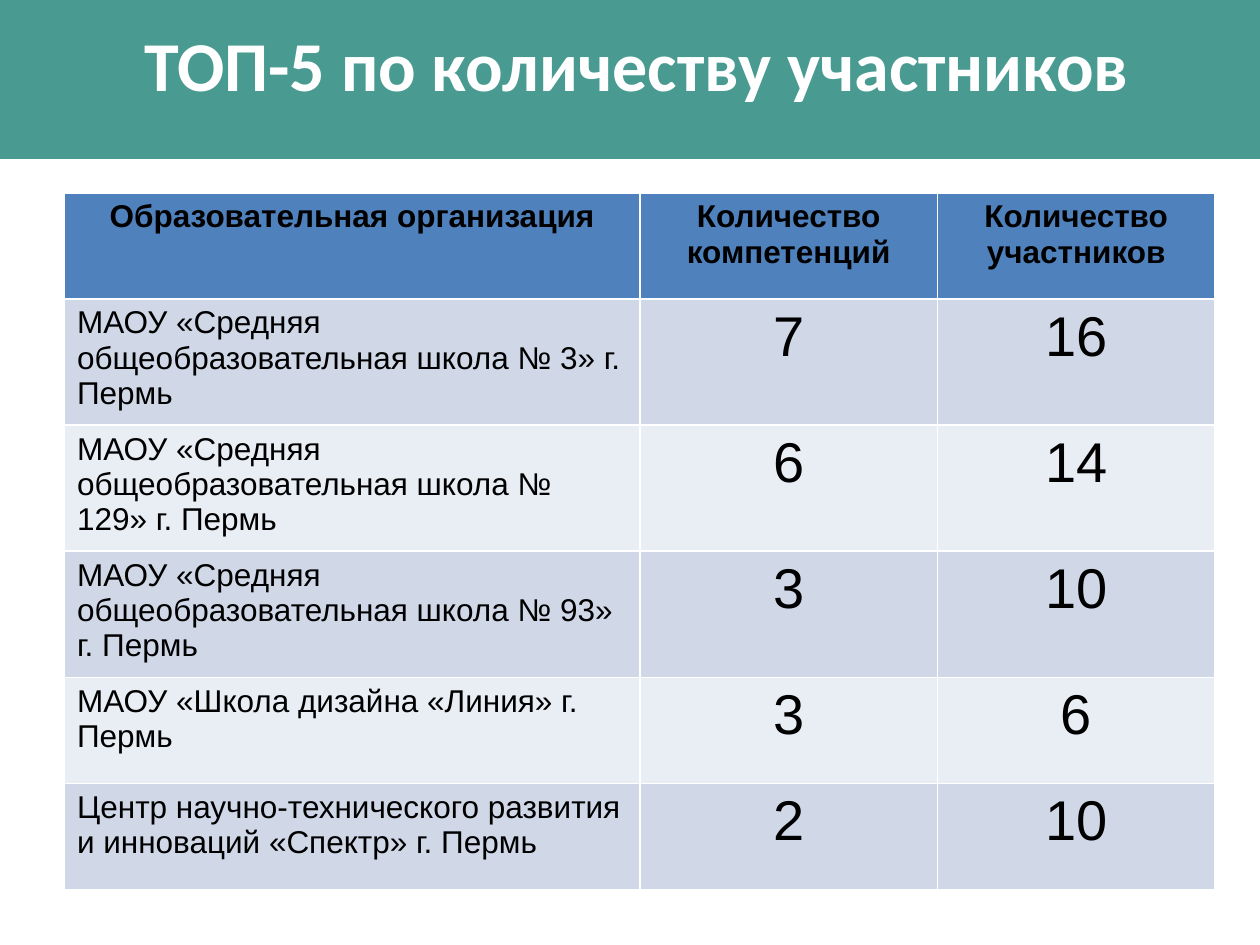
from dataclasses import dataclass

from pptx import Presentation
from pptx.dml.color import RGBColor
from pptx.enum.shapes import MSO_SHAPE
from pptx.enum.text import MSO_ANCHOR, PP_ALIGN
from pptx.util import Cm, Pt


@dataclass
class Theme:
    banner: str = "499B91"
    header: str = "4F81BD"
    bands: tuple = ("D0D8E8", "E9EDF4")
    white: str = "FFFFFF"
    black: str = "000000"
    title_font: str = "Calibri"
    table_font: str = "Arial"
    title_size: int = 40
    text_size: int = 18
    number_size: int = 32


theme = Theme()


def style_text(p, font, size, color, bold, align):
    p.alignment = align
    for r in p.runs:
        r.font.name = font
        r.font.size = Pt(size)
        r.font.bold = bold
        r.font.color.rgb = RGBColor.from_string(color)


prs = Presentation()
prs.slide_width, prs.slide_height = Cm(25.4), Cm(19.05)
s = prs.slides.add_slide(prs.slide_layouts[6])

banner = s.shapes.add_shape(MSO_SHAPE.RECTANGLE, 0, 0, prs.slide_width, Cm(3.18))
banner.shadow.inherit = False
banner.fill.solid()
banner.fill.fore_color.rgb = RGBColor.from_string(theme.banner)
banner.line.color.rgb = RGBColor.from_string(theme.banner)
banner.line.width = Pt(2)

title = s.shapes.add_textbox(Cm(1.4), 0, Cm(22.86), Cm(2.77))
tf = title.text_frame
tf.word_wrap = True
tf.vertical_anchor = MSO_ANCHOR.MIDDLE
tf.text = "ТОП-5 по количеству участников"
p = tf.paragraphs[0]
p.line_spacing = 0.9
style_text(p, theme.title_font, theme.title_size, theme.white, True, PP_ALIGN.CENTER)

rows = [
    ("Образовательная организация", "Количество компетенций", "Количество участников"),
    ("МАОУ «Средняя общеобразовательная школа № 3» г. Пермь", "7", "16"),
    ("МАОУ «Средняя общеобразовательная школа № 129» г. Пермь", "6", "14"),
    ("МАОУ «Средняя общеобразовательная школа № 93» г. Пермь", "3", "10"),
    ("МАОУ «Школа дизайна «Линия» г. Пермь", "3", "6"),
    ("Центр научно-технического развития и инноваций «Спектр» г. Пермь", "2", "10"),
]
widths = [11.6, 6, 5.59]
row_height = 2.14

table = s.shapes.add_table(
    len(rows), len(widths), Cm(1.3), Cm(3.89), Cm(sum(widths)), Cm(row_height * len(rows))
).table
for column, width in zip(table.columns, widths):
    column.width = Cm(width)

for i, row in enumerate(rows):
    table.rows[i].height = Cm(row_height)
    is_header = i == 0
    fill = theme.header if is_header else theme.bands[(i - 1) % 2]
    for j, text in enumerate(row):
        cell = table.cell(i, j)
        cell.fill.solid()
        cell.fill.fore_color.rgb = RGBColor.from_string(fill)
        cell.text_frame.text = text
        size = theme.text_size if is_header or j == 0 else theme.number_size
        align = PP_ALIGN.CENTER if is_header or j > 0 else PP_ALIGN.LEFT
        p = cell.text_frame.paragraphs[0]
        style_text(p, theme.table_font, size, theme.black, is_header, align)

prs.save("out.pptx")
